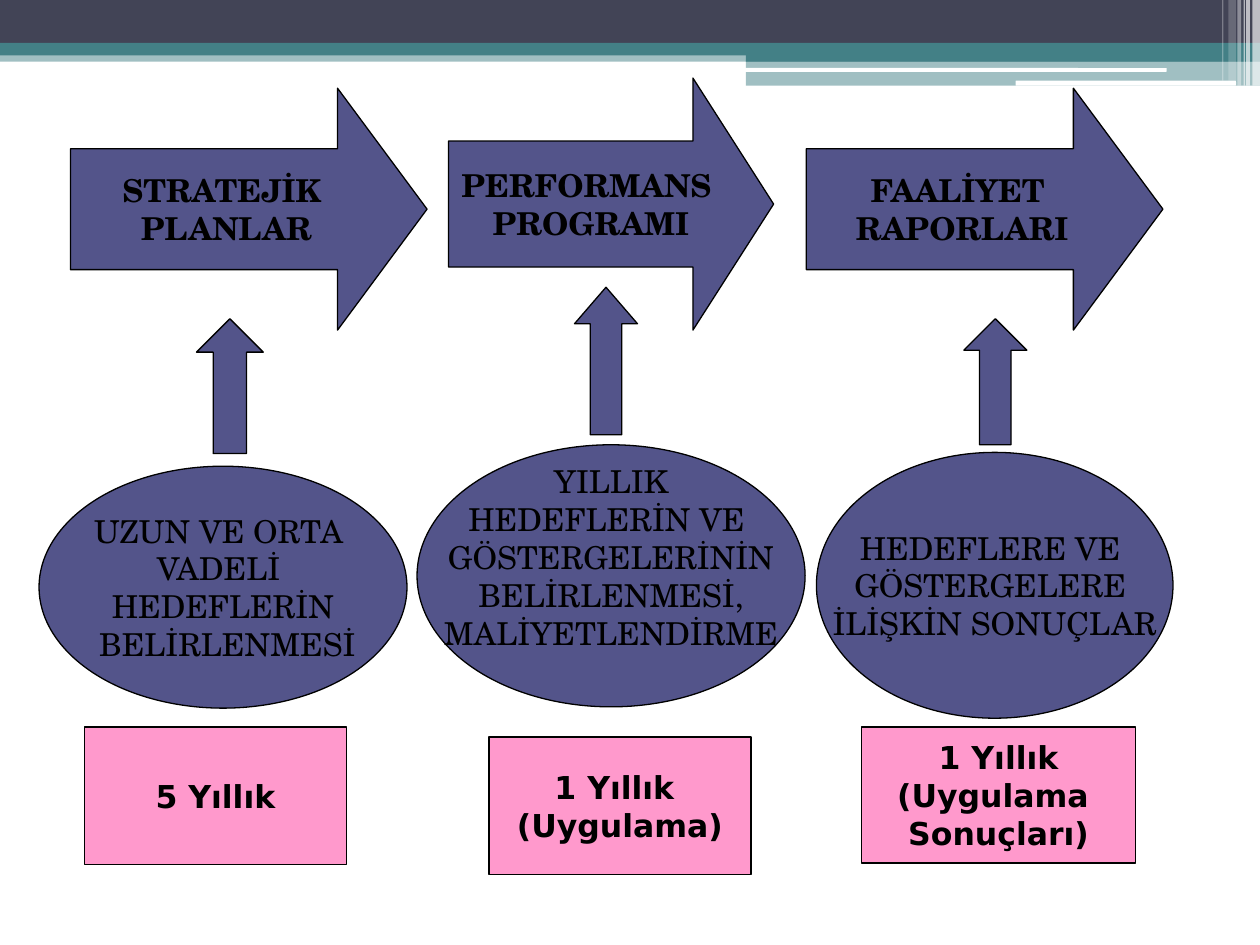
from lxml import etree
from pptx import Presentation
from pptx.dml.color import RGBColor
from pptx.enum.shapes import MSO_SHAPE
from pptx.enum.text import MSO_ANCHOR, PP_ALIGN
from pptx.oxml.ns import qn
from pptx.util import Inches, Pt

RECTANGLE = MSO_SHAPE.RECTANGLE
ROUNDED = MSO_SHAPE.ROUNDED_RECTANGLE
RIGHT_ARROW = MSO_SHAPE.RIGHT_ARROW
UP_ARROW = MSO_SHAPE.UP_ARROW
ELLIPSE = MSO_SHAPE.OVAL
PROCESS = MSO_SHAPE.FLOWCHART_PROCESS

NAVY, TEAL, INDIGO = "424456", "438086", "53548A"
PINK, WHITE, BLACK = "FF99CC", "FFFFFF", "000000"
SERIF, SANS = "TeX Gyre Schola", "DejaVu Sans"

presentation = Presentation()
presentation.slide_width = Inches(10)
presentation.slide_height = Inches(7.5)
slide = presentation.slides.add_slide(presentation.slide_layouts[6])


def add_shape(kind, box, color, opacity=100, outlined=False):
    shape = slide.shapes.add_shape(kind, *[Inches(length) for length in box])
    shape.shadow.inherit = False
    shape.fill.solid()
    shape.fill.fore_color.rgb = RGBColor.from_string(color)
    if opacity < 100:
        color_element = shape.fill._xPr.find(".//" + qn("a:srgbClr"))
        alpha = etree.SubElement(color_element, qn("a:alpha"))
        alpha.set("val", str(opacity * 1000))
    if outlined:
        shape.line.color.rgb = RGBColor.from_string(BLACK)
        shape.line.width = Pt(0.75)
    else:
        shape.line.fill.background()
    return shape


def write_lines(shape, lines, font_name, bold):
    frame = shape.text_frame
    frame.word_wrap = False
    frame.vertical_anchor = MSO_ANCHOR.MIDDLE
    frame.text = "\n".join(lines)
    for paragraph in frame.paragraphs:
        paragraph.alignment = PP_ALIGN.CENTER
        paragraph.font.name = font_name
        paragraph.font.size = Pt(18)
        paragraph.font.bold = bold
        paragraph.font.color.rgb = RGBColor.from_string(BLACK)


# Header bands
for box, color, opacity in [
    ((0, 0.4, 10, 0.09), TEAL, 50),
    ((0, 0, 10, 0.34), NAVY, 100),
    ((0, 0.34, 10, 0.1), TEAL, 100),
    ((5.92, 0.39, 4.08, 0.1), TEAL, 100),
    ((5.92, 0.48, 4.08, 0.2), TEAL, 50),
]:
    add_shape(RECTANGLE, box, color, opacity)

# White strips in the header
for box in [(5.91, 0.54, 3.35, 0.03), (8.06, 0.64, 1.75, 0.04)]:
    add_shape(ROUNDED, box, WHITE)

# Translucent stripes at the right edge
for left, width, height, opacity in [
    (9.94, 0.06, 0.68, 65),
    (9.89, 0.03, 0.68, 65),
    (9.87, 0.01, 0.68, 60),
    (9.82, 0.03, 0.68, 40),
    (9.75, 0.06, 0.64, 20),
    (9.7, 0.01, 0.64, 30),
]:
    add_shape(RECTANGLE, (left, 0, width, height), WHITE, opacity)

# Documents
for box, head, lines in [
    ((0.56, 0.7, 2.83, 1.92), 0.37, ["STRATEJİK ", "PLANLAR"]),
    ((3.56, 0.62, 2.58, 2), 0.32, ["PERFORMANS ", "PROGRAMI"]),
    ((6.4, 0.7, 2.83, 1.92), 0.37, ["FAALİYET ", "RAPORLARI"]),
]:
    document = add_shape(RIGHT_ARROW, box, INDIGO, outlined=True)
    document.adjustments[1] = head
    write_lines(document, lines, SERIF, True)

# Contents of each document; the last value is the bottom inset
for box, lines, bottom_inset in [
    ((0.31, 3.7, 2.92, 1.92),
     ["UZUN VE ORTA ", "VADELİ ", "HEDEFLERİN", " BELİRLENMESİ"], 0.05),
    ((3.31, 3.53, 3.08, 2.08),
     ["YILLIK", "HEDEFLERİN VE ", "GÖSTERGELERİNİN", "BELİRLENMESİ,",
      "MALİYETLENDİRME"], 0.35),
    ((6.48, 3.59, 2.83, 2.11),
     ["HEDEFLERE VE ", "GÖSTERGELERE ", "İLİŞKİN SONUÇLAR"], 0.05),
]:
    content = add_shape(ELLIPSE, box, INDIGO, outlined=True)
    write_lines(content, lines, SERIF, False)
    content.text_frame.margin_bottom = Inches(bottom_inset)

# Arrows from contents up to documents
for box, head in [
    ((1.56, 2.53, 0.53, 1.07), 0.5),
    ((4.56, 2.28, 0.5, 1.17), 0.58),
    ((7.65, 2.53, 0.5, 1), 0.5),
]:
    arrow = add_shape(UP_ARROW, box, INDIGO, outlined=True)
    arrow.adjustments[1] = head

# Periods
for kind, box, lines in [
    (RECTANGLE, (0.67, 5.77, 2.08, 1.09), ["5 Yıllık"]),
    (PROCESS, (3.88, 5.85, 2.08, 1.09), ["1 Yıllık ", "(Uygulama)"]),
    (RECTANGLE, (6.84, 5.77, 2.17, 1.08),
     ["1 Yıllık", "(Uygulama ", "Sonuçları)"]),
]:
    period = add_shape(kind, box, PINK, outlined=True)
    write_lines(period, lines, SANS, True)

presentation.save("out.pptx")
